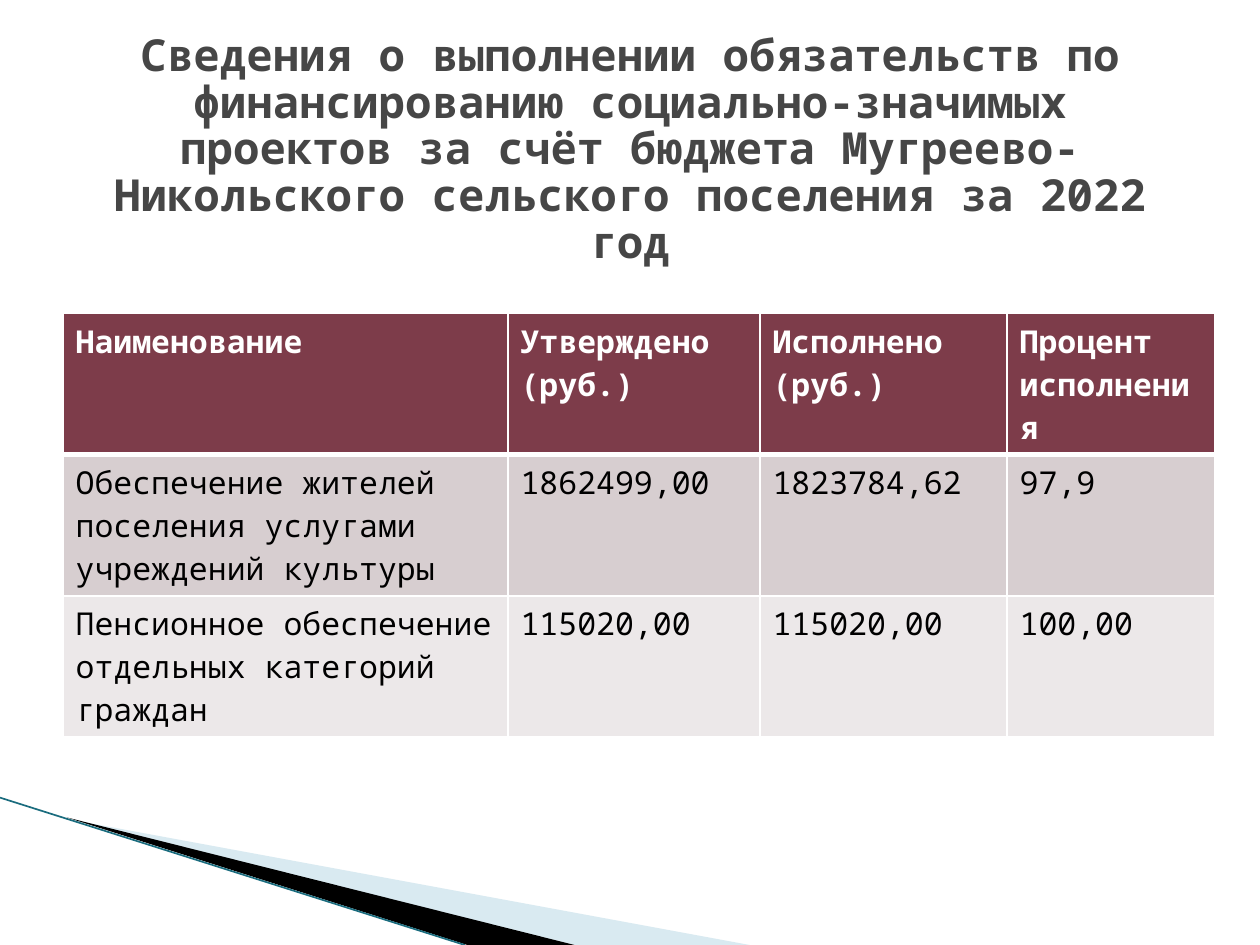
import pptx
import pptx.util
import pptx.dml.color
import pptx.enum.shapes
import pptx.enum.text
import pptx.oxml
import pptx.oxml.ns

Cm = pptx.util.Cm
Pt = pptx.util.Pt
RGB = pptx.dml.color.RGBColor
qn = pptx.oxml.ns.qn

FONT = "Noto Sans Mono"
WHITE = RGB(0xFF, 0xFF, 0xFF)
BLACK = RGB(0, 0, 0)
GREY = RGB(0x46, 0x46, 0x46)
WINE = RGB(0x7D, 0x3C, 0x4A)
ROSE = RGB(0xD7, 0xCE, 0xD0)
PALE = RGB(0xEC, 0xE8, 0xE9)
SKY = RGB(0xA0, 0xCB, 0xDC)
TEAL = RGB(0x1A, 0x6C, 0x7E)

TITLE = ("Сведения о выполнении обязательств по финансированию "
         "социально-значимых проектов за счёт бюджета "
         "Мугреево-Никольского сельского поселения за 2022 год")
ROWS = [
    ("Наименование", "Утверждено (руб.)", "Исполнено (руб.)", "Процент исполнения"),
    ("Обеспечение жителей поселения услугами учреждений культуры",
     "1862499,00", "1823784,62", "97,9"),
    ("Пенсионное обеспечение отдельных категорий граждан",
     "115020,00", "115020,00", "100,00"),
]
FILLS = [WINE, ROSE, PALE]
WIDTHS = [8.97, 5.08, 4.98, 4.19]


def add_wedge(slide, points, color):
    pts = [(Cm(x), Cm(y)) for x, y in points]
    form = slide.shapes.build_freeform(*pts[0], scale=1.0)
    form.add_line_segments(pts[1:], close=True)
    wedge = form.convert_to_shape()
    wedge.shadow.inherit = False
    wedge.fill.solid()
    wedge.fill.fore_color.rgb = color
    wedge.line.fill.background()
    return wedge


def set_edges(cell, below):
    props = cell._tc.get_or_add_tcPr()
    sides = [("lnL", 1), ("lnR", 1), ("lnT", 1), ("lnB", below)]
    for spot, (side, width) in enumerate(sides):
        edge = pptx.oxml.parse_xml(
            f'<a:{side} {pptx.oxml.ns.nsdecls("a")} w="{Pt(width)}">'
            f'<a:solidFill><a:srgbClr val="{WHITE}"/></a:solidFill></a:{side}>')
        props.insert(spot, edge)


deck = pptx.Presentation()
deck.slide_width, deck.slide_height = Cm(25.4), Cm(19.05)
slide = deck.slides.add_slide(deck.slide_layouts[5])

# Corner decoration
band = add_wedge(slide, [(1.4, 16.52), (15.11, 19.05), (11.58, 19.05)], SKY)
tint = band.fill._xPr.find(".//" + qn("a:srgbClr"))
tint.append(pptx.oxml.parse_xml(
    f'<a:alpha {pptx.oxml.ns.nsdecls("a")} val="40000"/>'))
add_wedge(slide, [(1.35, 16.48), (11.58, 19.05), (9.42, 19.05)], BLACK)
line = slide.shapes.add_connector(
    pptx.enum.shapes.MSO_CONNECTOR.STRAIGHT, 0, Cm(16.08), Cm(9.37), Cm(19.05))
line.line.color.rgb = TEAL
line.line.width = Pt(0.95)
line._element.spPr.append(pptx.oxml.parse_xml(
    f'<a:effectLst {pptx.oxml.ns.nsdecls("a")}/>'))

# Title
title = slide.shapes.title
title.left, title.top, title.width, title.height = Cm(1.27), Cm(0.76), Cm(22.86), Cm(4.57)
frame = title.text_frame
frame.text = TITLE
frame.word_wrap = True
frame.auto_size = pptx.enum.text.MSO_AUTO_SIZE.NONE
frame.vertical_anchor = pptx.enum.text.MSO_ANCHOR.MIDDLE
para = frame.paragraphs[0]
para.alignment = pptx.enum.text.PP_ALIGN.CENTER
para.line_spacing = 0.88
para.font.name, para.font.size = FONT, Pt(25.2)
para.font.bold = True
para.font.color.rgb = GREY

# Table: rows grow to fit their text
table = slide.shapes.add_table(
    len(ROWS), len(WIDTHS), Cm(1.27), Cm(6.32), Cm(sum(WIDTHS)), Cm(3.12)).table
for col, width in zip(table.columns, WIDTHS):
    col.width = Cm(width)
for r, row in enumerate(ROWS):
    head = r == 0
    for c, text in enumerate(row):
        cell = table.cell(r, c)
        cell.text = text
        cell.fill.solid()
        cell.fill.fore_color.rgb = FILLS[r]
        set_edges(cell, 3 if head else 1)
        para = cell.text_frame.paragraphs[0]
        para.font.name, para.font.size = FONT, Pt(18)
        para.font.bold = head
        para.font.color.rgb = WHITE if head else BLACK

deck.save("out.pptx")
